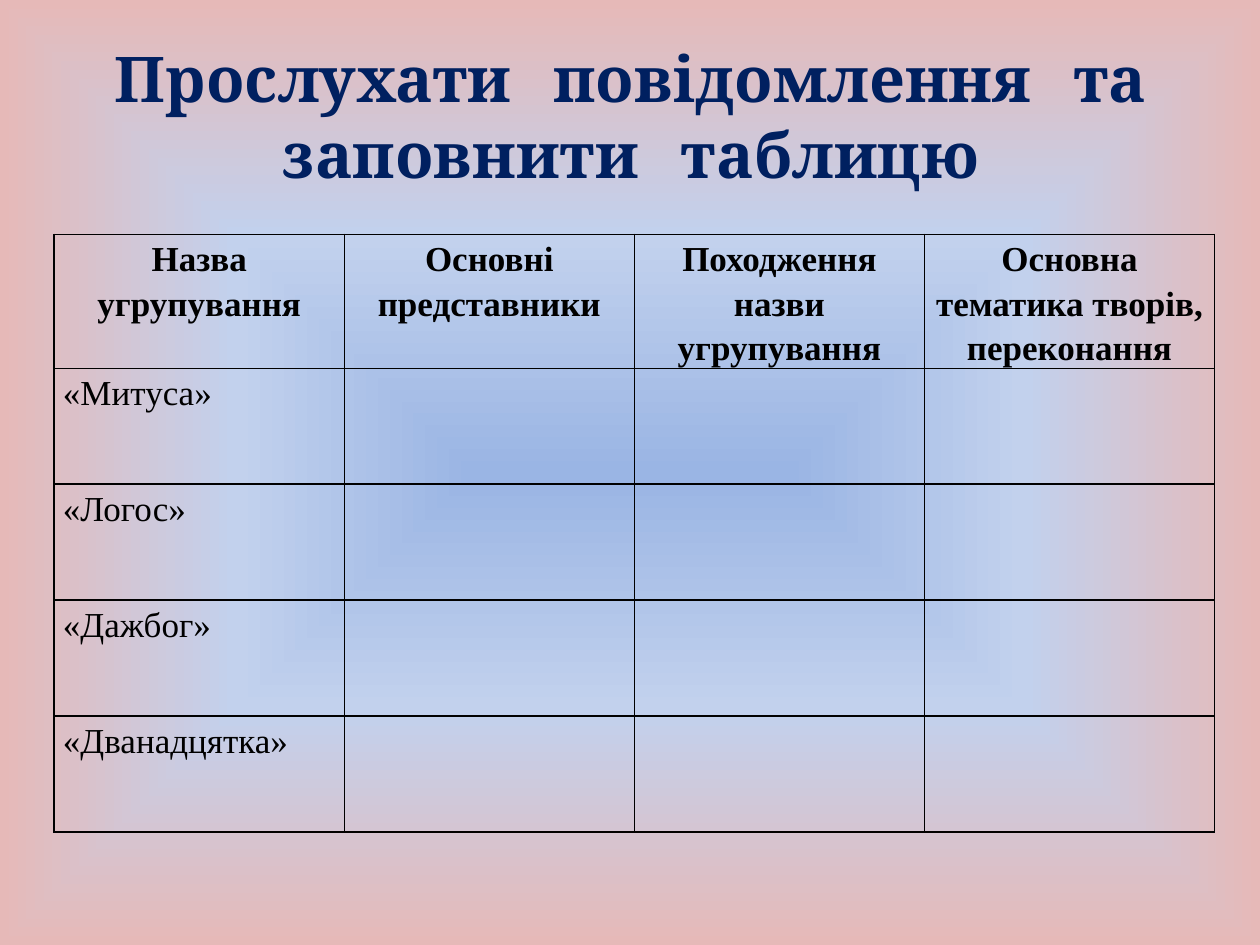
from dataclasses import dataclass

from lxml.etree import SubElement
from pptx import Presentation
from pptx.dml.color import RGBColor
from pptx.enum.text import MSO_ANCHOR, PP_ALIGN
from pptx.oxml import parse_xml
from pptx.oxml.ns import nsdecls, qn
from pptx.util import Inches, Pt


@dataclass(frozen=True)
class Theme:
    """Colours, fonts and sizes of the slide."""
    title_color: str = "002060"
    ink: str = "000000"
    gradient: tuple = ((0, "9AB5E4"), (50, "C2D1ED"), (100, "E6B9B8"))
    title_font: str = "Cambria"
    table_font: str = "Times New Roman"
    title_size: int = 36
    table_size: int = 20
    gap_spacing: int = 16
    border_width: int = 1
    line_spacing: float = 1.15


THEME = Theme()
TITLE_PHRASES = (("Прослухати", "повідомлення", "та заповнити", "таблицю"))
HEADINGS = (
    "Назва угрупування",
    "Основні представники",
    "Походження назви угрупування",
    "Основна тематика творів, переконання",
)
GROUPS = ("«Митуса»", "«Логос»", "«Дажбог»", "«Дванадцятка»")


def paint_background(slide):
    """Fill the slide with a gradient that spreads from its centre."""
    slide.background.fill.gradient()
    gradient = next(slide.element.iter(qn("a:gradFill")))
    stops = "".join(
        f'<a:gs pos="{share * 1000}"><a:srgbClr val="{color}"/></a:gs>'
        for share, color in THEME.gradient
    )
    centred = parse_xml(
        f'<a:gradFill {nsdecls("a")} rotWithShape="1"><a:gsLst>{stops}</a:gsLst>'
        '<a:path path="rect"><a:fillToRect l="50000" t="50000" r="50000" b="50000"/>'
        "</a:path></a:gradFill>".replace('path="rect"', 'path="shape"')
    )
    gradient.getparent().replace(gradient, centred)


def add_run(paragraph, text, font, size, color, bold):
    """Append one formatted run and return it."""
    run = paragraph.add_run()
    run.text = text
    run.font.name = font
    run.font.size = Pt(size)
    run.font.bold = bold
    run.font.color.rgb = RGBColor.from_string(color)
    return run


def place_title(slide, left, top, width, height):
    """Put the title in its box, with widened gaps between phrases."""
    title = slide.shapes.title
    title.left, title.top, title.width, title.height = left, top, width, height
    frame = title.text_frame
    frame.word_wrap = True
    frame.vertical_anchor = MSO_ANCHOR.MIDDLE
    paragraph = frame.paragraphs[0]
    paragraph.alignment = PP_ALIGN.CENTER
    style = (THEME.title_font, THEME.title_size, THEME.title_color, True)
    for index, phrase in enumerate(TITLE_PHRASES):
        if index:
            gap = add_run(paragraph, " ", *style)
            gap.font._element.set("spc", str(THEME.gap_spacing * 100))
        add_run(paragraph, phrase, *style)


def format_cell(cell):
    """Give a cell clear fill, slim margins and thin borders."""
    cell.margin_left = cell.margin_right = Inches(0.07)
    cell.margin_top = cell.margin_bottom = 0
    properties = cell._tc.get_or_add_tcPr()
    for side in ("lnL", "lnR", "lnT", "lnB"):
        line = SubElement(properties, qn(f"a:{side}"), w=str(Pt(THEME.border_width)))
        fill = SubElement(line, qn("a:solidFill"))
        SubElement(fill, qn("a:srgbClr"), val=THEME.ink)
    cell.fill.background()


def write_cell(cell, text, bold, alignment):
    """Write one paragraph into a cell."""
    paragraph = cell.text_frame.paragraphs[0]
    paragraph.alignment = alignment
    paragraph.line_spacing = THEME.line_spacing
    add_run(paragraph, text, THEME.table_font, THEME.table_size, THEME.ink, bold)


def place_table(slide, left, top, width, header_height, row_height):
    """Build the table of literary groups in equal columns."""
    height = header_height + row_height * len(GROUPS)
    table = slide.shapes.add_table(
        len(GROUPS) + 1, len(HEADINGS), left, top, width, height
    ).table
    table.first_row = table.horz_banding = False
    for row in table.rows:
        row.height = row_height
    table.rows[0].height = header_height
    for cell in table.iter_cells():
        format_cell(cell)
    for column, heading in enumerate(HEADINGS):
        write_cell(table.cell(0, column), heading, True, PP_ALIGN.CENTER)
    for row, group in enumerate(GROUPS, start=1):
        write_cell(table.cell(row, 0), group, False, PP_ALIGN.LEFT)


def main():
    """Create the presentation and save it."""
    presentation = Presentation()
    presentation.slide_width, presentation.slide_height = Inches(10), Inches(7.5)
    slide = presentation.slides.add_slide(presentation.slide_layouts[5])
    paint_background(slide)
    place_title(slide, Inches(0.28), Inches(0.29), Inches(9.45), Inches(1.25))
    place_table(
        slide, Inches(0.43), Inches(1.86), Inches(9.21), Inches(0.71), Inches(0.92)
    )
    presentation.save("out.pptx")


if __name__ == "__main__":
    main()
